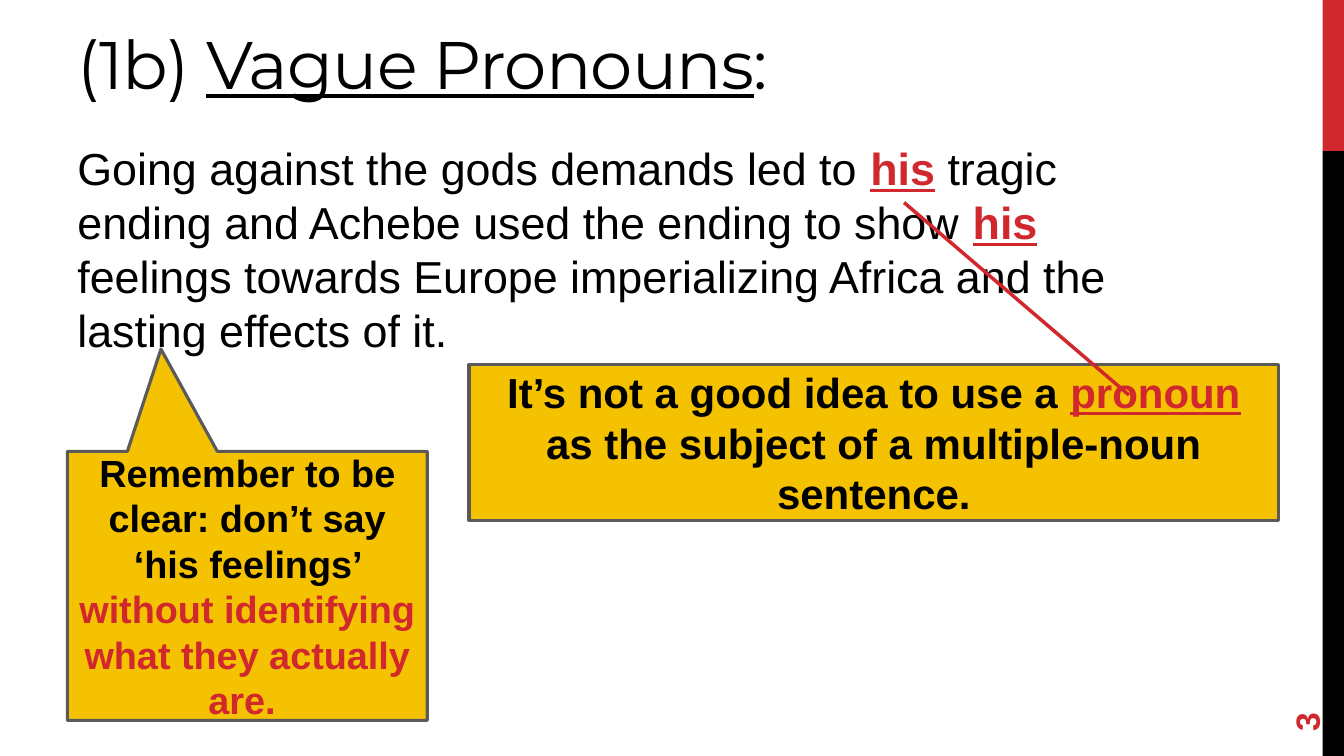
from dataclasses import dataclass

from lxml import etree
from pptx import Presentation
from pptx.dml.color import RGBColor
from pptx.enum.shapes import MSO_CONNECTOR, MSO_SHAPE
from pptx.enum.text import MSO_ANCHOR, PP_ALIGN
from pptx.oxml.ns import qn
from pptx.slide import Slide
from pptx.util import Pt

RECTANGLE = MSO_SHAPE.RECTANGLE
PROCESS = MSO_SHAPE.FLOWCHART_PROCESS
CALLOUT = MSO_SHAPE.RECTANGULAR_CALLOUT
STRAIGHT = MSO_CONNECTOR.STRAIGHT
TOP, MIDDLE = MSO_ANCHOR.TOP, MSO_ANCHOR.MIDDLE
LEFT, CENTER = PP_ALIGN.LEFT, PP_ALIGN.CENTER


@dataclass(frozen=True)
class Theme:
    ink: str = "000000"
    red: str = "D1282E"
    yellow: str = "F5C201"
    outline: str = "5A5A5A"
    body_font: str = "Arial"
    title_font: str = "Montserrat"
    title_size: float = 48
    body_size: float = 32
    advice_size: float = 30
    reminder_size: float = 27
    number_size: float = 24
    outline_width: float = 2.25
    pointer_width: float = 2.5


THEME = Theme()


@dataclass(frozen=True)
class Box:
    left: float
    top: float
    width: float
    height: float

    def lengths(self) -> tuple[Pt, Pt, Pt, Pt]:
        return Pt(self.left), Pt(self.top), Pt(self.width), Pt(self.height)


@dataclass(frozen=True)
class Phrase:
    text: str
    color: str = THEME.ink
    bold: bool = False
    underline: bool = False


@dataclass(frozen=True)
class Passage:
    box: Box
    phrases: tuple[Phrase, ...]
    size: float
    font: str = THEME.body_font
    tracking: float = 0
    space_before: float = 0
    space_after: float = 0
    anchor: MSO_ANCHOR = TOP
    align: PP_ALIGN = LEFT
    rotation: float = 0
    outline: MSO_SHAPE | None = None
    pointer_tip: tuple[float, ...] = ()


@dataclass(frozen=True)
class Band:
    box: Box
    color: str


BANDS = (
    Band(Box(944.8, 0, 15.2, 108), THEME.red),
    Band(Box(944.8, 108, 15.2, 432), THEME.ink),
)

TITLE = Passage(
    Box(48.2, 12.2, 607.7, 85.7),
    (Phrase("(1b) "), Phrase("Vague Pronouns", underline=True), Phrase(":")),
    THEME.title_size,
    font=THEME.title_font,
    tracking=-0.6,
)
EXAMPLE = Passage(
    Box(48.2, 97.2, 800, 162.7),
    (
        Phrase("Going against the gods demands led to "),
        Phrase("his", THEME.red, True, True),
        Phrase(" tragic ending and Achebe used the ending to show "),
        Phrase("his", THEME.red, True, True),
        Phrase(" feelings towards Europe imperializing Africa and the lasting effects of it."),
    ),
    THEME.body_size,
    space_before=3,
    space_after=6,
)
SLIDE_NUMBER = Passage(
    Box(881.3, 458.6, 103.7, 38.2),
    (Phrase("3", THEME.red, True),),
    THEME.number_size,
    anchor=MIDDLE,
    rotation=270,
)
ADVICE = Passage(
    Box(335, 260.6, 578.5, 111),
    (
        Phrase("It’s not a good idea to use a ", bold=True),
        Phrase("pronoun", THEME.red, True, True),
        Phrase(" as the subject of a multiple-noun sentence.", bold=True),
    ),
    THEME.advice_size,
    anchor=MIDDLE,
    align=CENTER,
    outline=PROCESS,
)
REMINDER = Passage(
    Box(48.2, 322.4, 257, 192.2),
    (
        Phrase("Remember to be clear: don’t say ‘his feelings’ ", bold=True),
        Phrase("without identifying what they actually are. ", THEME.red, True),
    ),
    THEME.reminder_size,
    anchor=MIDDLE,
    align=CENTER,
    outline=CALLOUT,
    pointer_tip=(-0.24, -0.88),
)


def draw_band(slide: Slide, band: Band) -> None:
    strip = slide.shapes.add_shape(RECTANGLE, *band.box.lengths())
    strip.shadow.inherit = False
    strip.fill.solid()
    strip.fill.fore_color.rgb = RGBColor.from_string(band.color)
    strip.line.fill.background()


def draw_passage(slide: Slide, passage: Passage) -> None:
    if passage.outline is None:
        holder = slide.shapes.add_textbox(*passage.box.lengths())
    else:
        holder = slide.shapes.add_shape(passage.outline, *passage.box.lengths())
        holder.shadow.inherit = False
        holder.fill.solid()
        holder.fill.fore_color.rgb = RGBColor.from_string(THEME.yellow)
        holder.line.color.rgb = RGBColor.from_string(THEME.outline)
        holder.line.width = Pt(THEME.outline_width)
        for index, offset in enumerate(passage.pointer_tip):
            holder.adjustments[index] = offset
    holder.rotation = passage.rotation
    frame = holder.text_frame
    frame.word_wrap = True
    frame.vertical_anchor = passage.anchor
    paragraph = frame.paragraphs[0]
    paragraph.alignment = passage.align
    paragraph.space_before = Pt(passage.space_before)
    paragraph.space_after = Pt(passage.space_after)
    for phrase in passage.phrases:
        run = paragraph.add_run()
        run.text = phrase.text
        run.font.name = passage.font
        run.font.size = Pt(passage.size)
        run.font.bold = phrase.bold
        run.font.underline = phrase.underline
        run.font.color.rgb = RGBColor.from_string(phrase.color)
        if passage.tracking:
            run.font._element.set("spc", str(round(passage.tracking * 100)))


def draw_pronoun_pointer(slide: Slide) -> None:
    pointer = slide.shapes.add_connector(STRAIGHT, Pt(806.4), Pt(282.2), Pt(645.8), Pt(144.7))
    pointer.line.color.rgb = RGBColor.from_string(THEME.red)
    pointer.line.width = Pt(THEME.pointer_width)
    etree.SubElement(pointer._element.spPr, qn("a:effectLst"))


def main() -> None:
    deck = Presentation()
    deck.slide_width, deck.slide_height = Pt(960), Pt(540)
    slide = deck.slides.add_slide(deck.slide_layouts[6])
    for band in BANDS:
        draw_band(slide, band)
    for passage in (TITLE, EXAMPLE, SLIDE_NUMBER, ADVICE):
        draw_passage(slide, passage)
    draw_pronoun_pointer(slide)
    draw_passage(slide, REMINDER)
    deck.save("out.pptx")


if __name__ == "__main__":
    main()
